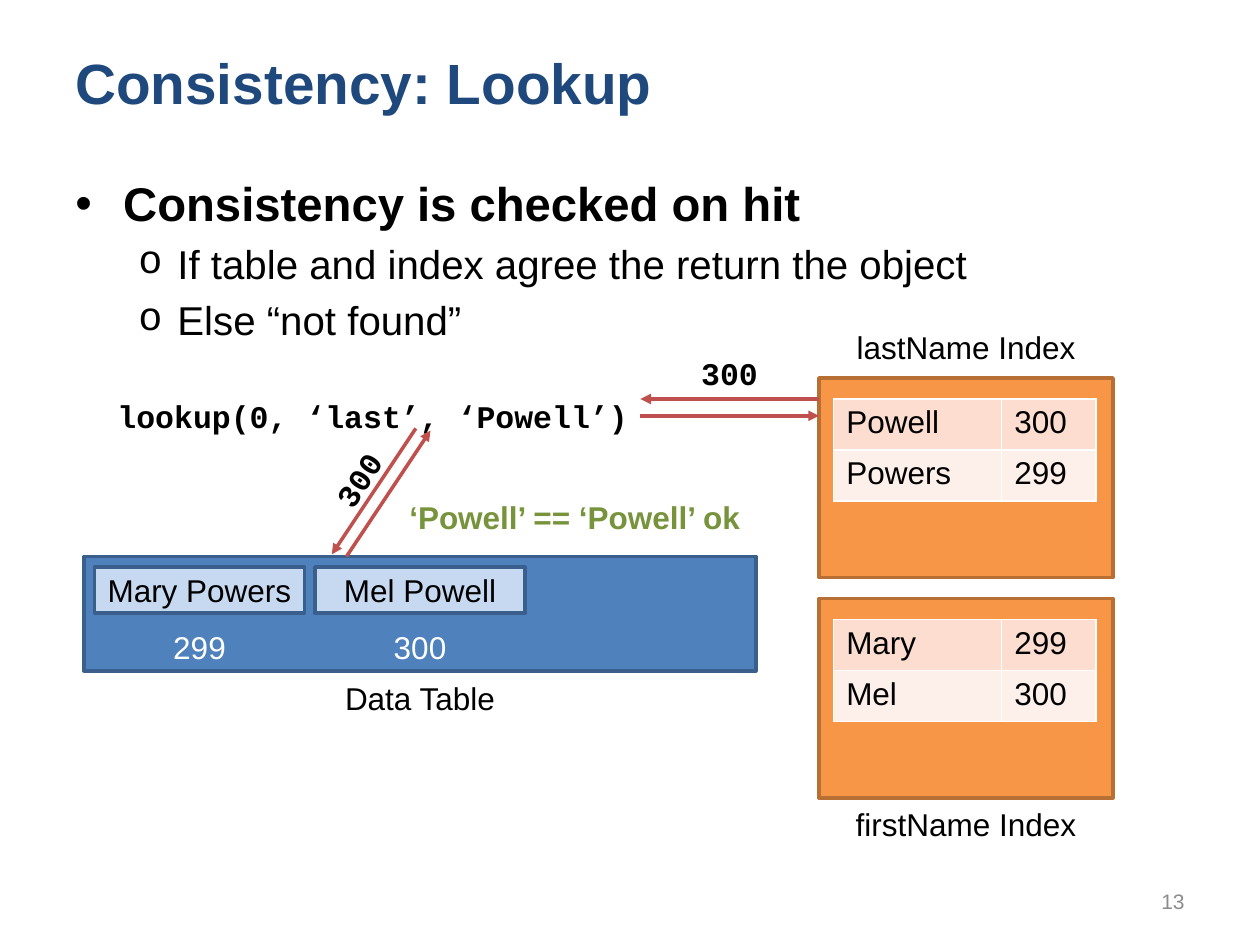
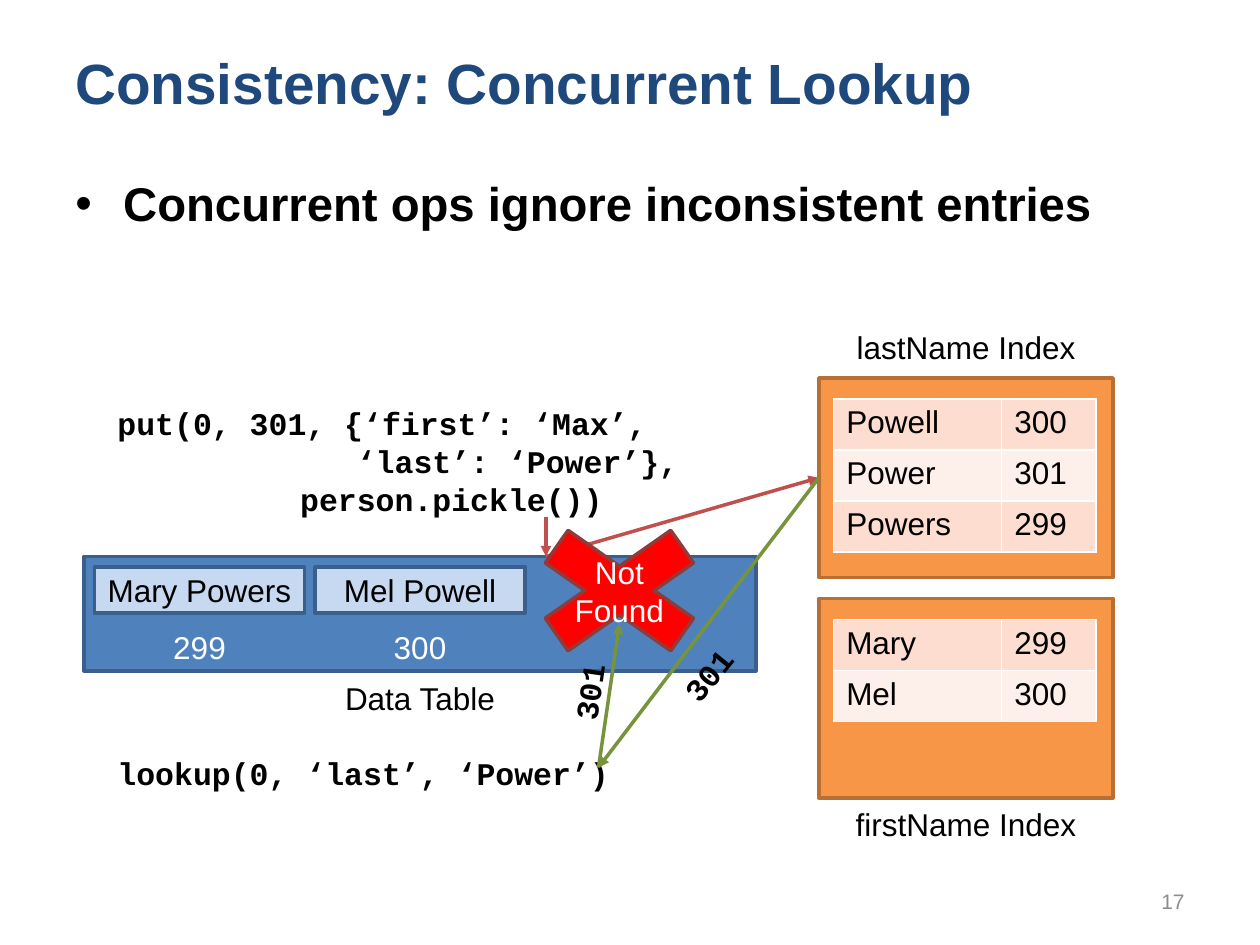
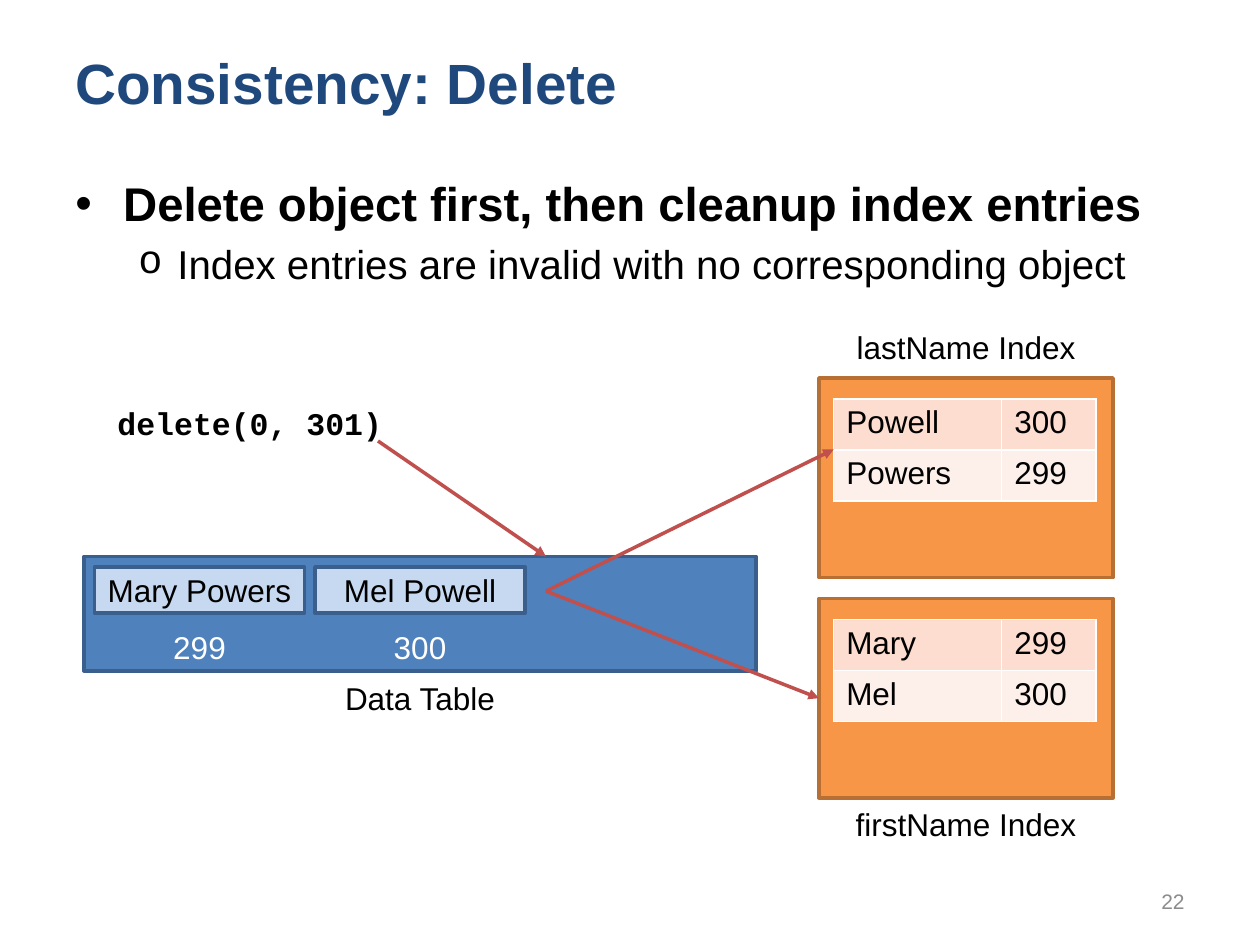
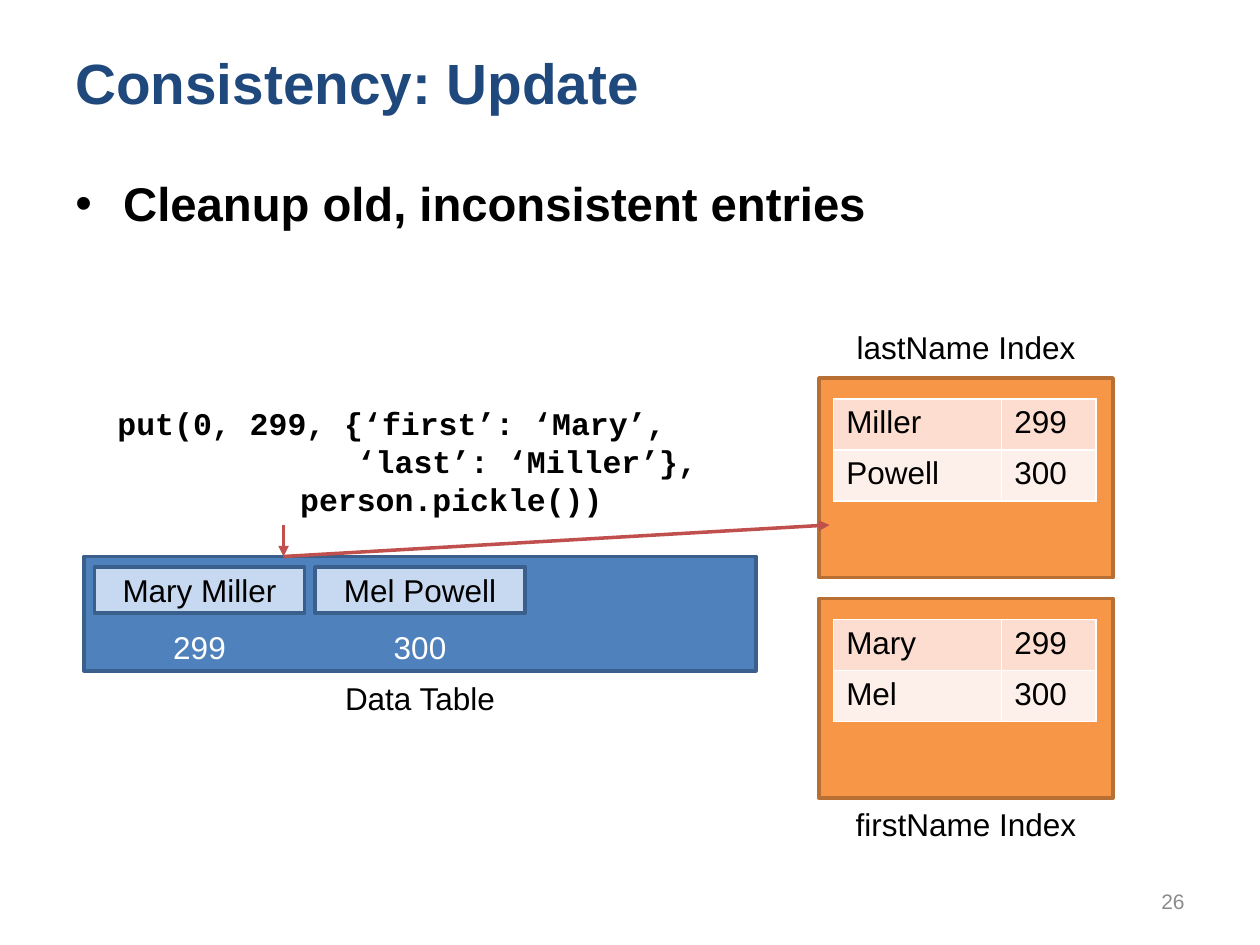
from pptx import Presentation, util as u
from pptx.dml.color import RGBColor
from pptx.enum import shapes as s, text as t
from pptx.oxml import parse_xml
from pptx.oxml.ns import nsdecls


class Theme:
    sans, mono = "Arial", "Courier New"
    black, white, gray = "000000", "FFFFFF", "8C8C8C"
    navy, red, green = "1F497D", "C0504D", "77933C"
    blue, pale, edge = "4F81BD", "C6D9F1", "3A5F8C"
    orange, rust = "F79646", "B76F34"
    bands = "FCDDCF", "FDEFE9"
    cross, maroon = "FF0000", "8E3B39"
    title, head, sub, text, small = 32.4, 27, 23, 18, 12
    line = 2


# The slide is a grid of 120 columns and 90 rows
COLS, ROWS = 120, 90
UNIT = u.Inches(10) // COLS
LINE = 4.8  # height of a one-line label
LEFT, MID, RIGHT = t.PP_ALIGN.LEFT, t.PP_ALIGN.CENTER, t.PP_ALIGN.RIGHT
TOP, HALF = t.MSO_ANCHOR.TOP, t.MSO_ANCHOR.MIDDLE
RECT, CROSS = s.MSO_SHAPE.RECTANGLE, s.MSO_SHAPE.MATH_MULTIPLY


def draw(pool, box, words="", kind=None, fill=None, edge=None, size=Theme.text,
         color=Theme.black, font=Theme.sans, bold=False, align=LEFT, anchor=TOP):
    """Add a shape of the given kind, or a text box, at a place on the grid."""
    place = [round(n * UNIT) for n in box]
    if kind is None:
        item = pool.add_textbox(*place)
    else:
        item = pool.add_shape(kind, *place)
        item.shadow.inherit = False
        item.fill.solid()
        item.fill.fore_color.rgb = RGBColor.from_string(fill)
        item.line.color.rgb = RGBColor.from_string(edge)
        item.line.width = u.Pt(Theme.line)
    frame = item.text_frame
    frame.word_wrap = True
    frame.vertical_anchor = anchor
    frame.text = words
    for para in frame.paragraphs:
        para.alignment = align
        for run in para.runs:
            run.font.name, run.font.size, run.font.bold = font, u.Pt(size), bold
            run.font.color.rgb = RGBColor.from_string(color)
    return item


def link(pool, ends, color):
    """Add an arrow that runs between two grid points."""
    item = pool.add_connector(s.MSO_CONNECTOR.STRAIGHT, *[round(n * UNIT) for n in ends])
    item.line.color.rgb = RGBColor.from_string(color)
    item.line.width = u.Pt(Theme.line)
    item.line._get_or_add_ln().append(
        parse_xml(f'<a:tailEnd {nsdecls("a")} type="triangle"/>'))
    item._element.spPr.append(parse_xml(f'<a:effectLst {nsdecls("a")}/>'))


# What differs from slide to slide
R, G = Theme.red, Theme.green
PEOPLE = ["Mary Powers", "Mel Powell"]
NAMES = [("Powell", "300"), ("Powers", "299")]
PAGES = [
    dict(title="Consistency: Lookup", page="13",
         head="Consistency is checked on hit",
         subs=["If table and index agree the return the object", "Else “not found”"],
         people=PEOPLE, last=NAMES,
         code=[(37.2, "lookup(0, ‘last’, ‘Powell’)")],
         links=[((61, 39.6, 78, 39.6), R), ((39.6, 40.8, 31.6, 52.8), R),
                ((33, 53, 41, 41), R), ((78, 38, 61, 38), R)],
         keys=[("300", 65.6, 33.1, 0), ("300", 30.2, 43.2, 303.3)]),
    dict(title="Consistency: Concurrent Lookup", page="17",
         head="Concurrent ops ignore inconsistent entries", subs=[],
         people=PEOPLE, last=[NAMES[0], ("Power", "301"), NAMES[1]],
         code=[(37.9, "put(0, 301, {‘first’: ‘Max’,\n‘last’: ‘Power’},\nperson.pickle())"),
               (71.2, "lookup(0, ‘last’, ‘Power’)")],
         links=[((52, 49.2, 52, 53), R), ((52, 53, 78, 45.5), R),
                ((57, 73.1, 59, 59.4), G), ((78, 45.5, 57, 73.1), G)],
         keys=[("301", 63.5, 61.8, 309.1), ("301", 52.1, 63.4, 278.2)]),
    dict(title="Consistency: Delete", page="22",
         head="Delete object first, then cleanup index entries",
         subs=["Index entries are invalid with no corresponding object"],
         people=PEOPLE, last=NAMES,
         code=[(37.9, "delete(0, 301)")],
         links=[((36, 42, 52, 53), R), ((52, 56.3, 79.4, 42.8), R),
                ((52, 56.3, 78, 66.5), R)],
         keys=[]),
    dict(title="Consistency: Update", page="26",
         head="Cleanup old, inconsistent entries", subs=[],
         people=["Mary Miller", "Mel Powell"],
         last=[("Miller", "299"), ("Powell", "300")],
         code=[(37.9, "put(0, 299, {‘first’: ‘Mary’,\n‘last’: ‘Miller’},\nperson.pickle())")],
         links=[((27, 50, 27, 53), R), ((27, 53, 79, 50), R)],
         keys=[]),
]
FIRST = [("Mary", "299"), ("Mel", "300")]

deck = Presentation()
deck.slide_width, deck.slide_height = COLS * UNIT, ROWS * UNIT

for page in PAGES:
    pool = deck.slides.add_slide(deck.slide_layouts[6]).shapes

    # Title and page number
    draw(pool, (6, 3.6, 108, 8.4), page["title"], size=Theme.title,
         color=Theme.navy, bold=True, anchor=HALF)
    draw(pool, (86, 83.4, 28, LINE), page["page"], size=Theme.small,
         color=Theme.gray, align=RIGHT, anchor=HALF)

    # Bullets
    body = draw(pool, (6, 16, 108, 64.4), "\n".join([page["head"]] + page["subs"]),
                size=Theme.sub)
    for rank, para in enumerate(body.text_frame.paragraphs):
        if rank == 0:
            mark, face, left, hang = "•", Theme.sans, 0.38, 0.38
            para.runs[0].font.size, para.runs[0].font.bold = u.Pt(Theme.head), True
        else:
            mark, face, left, hang = "o", Theme.mono, 0.81, 0.31
            para.level = 1
        props = para._p.get_or_add_pPr()
        props.set("marL", str(u.Inches(left)))
        props.set("indent", str(-u.Inches(hang)))
        for xml in ('<a:spcBef {}><a:spcPct val="20000"/></a:spcBef>',
                    f'<a:buFont {{}} typeface="{face}"/>',
                    f'<a:buChar {{}} char="{mark}"/>'):
            props.append(parse_xml(xml.format(nsdecls("a"))))

    # Data table with its records
    data = pool.add_group_shape().shapes
    draw(data, (8, 53, 64, 10.9), kind=RECT, fill=Theme.blue, edge=Theme.edge)
    for col, (name, key) in enumerate(zip(page["people"], ("299", "300"))):
        x = 9 + 21 * col
        draw(data, (x, 54, 20, 4.4), name, RECT, Theme.pale, Theme.edge,
             align=MID, anchor=HALF)
        draw(data, (x, 59.2, 20, LINE), key, color=Theme.white, align=MID)
    draw(data, (8, 64.1, 64, LINE), "Data Table", align=MID)

    # The two indexes
    for y, rows, name, high in ((36, page["last"], "lastName Index", 30.7),
                                (57, FIRST, "firstName Index", 76.1)):
        draw(pool, (78, y, 28, 19), kind=RECT, fill=Theme.orange, edge=Theme.rust)
        draw(pool, (78, high, 28, LINE), name, align=MID)
        place = [round(n * UNIT) for n in (79.4, y + 2, 25, 4.86 * len(rows))]
        grid = pool.add_table(len(rows), 2, *place).table
        grid.first_row = grid.horz_banding = False
        for col, wide in enumerate((16, 9)):
            grid.columns[col].width = wide * UNIT
        for row, pair in enumerate(rows):
            for col, word in enumerate(pair):
                cell = grid.cell(row, col)
                for side in "LRTB":
                    cell._tc.get_or_add_tcPr().append(parse_xml(
                        f'<a:ln{side} {nsdecls("a")} w="12700"><a:solidFill>'
                        f'<a:srgbClr val="{Theme.white}"/></a:solidFill></a:ln{side}>'))
                cell.fill.solid()
                cell.fill.fore_color.rgb = RGBColor.from_string(Theme.bands[row % 2])
                cell.text_frame.text = word
                font = cell.text_frame.paragraphs[0].runs[0].font
                font.name, font.size, font.bold = Theme.sans, u.Pt(Theme.text), False
                font.color.rgb = RGBColor.from_string(Theme.black)

    # Calls, with later lines indented
    for y, words in page["code"]:
        lines = words.count("\n") + 1
        call = draw(pool, (10, y, 62, LINE * lines), words, font=Theme.mono, bold=True)
        for para, left in zip(call.text_frame.paragraphs, (0, 1.9, 1.45)):
            para._p.get_or_add_pPr().set("marL", str(u.Inches(left)))

    # Arrows and the keys they carry
    for ends, color in page["links"]:
        link(pool, ends, color)
    for key, x, y, turn in page["keys"]:
        draw(pool, (x, y, 8, LINE), key, font=Theme.mono, bold=True).rotation = turn

    # Outcome of the lookup
    if page["page"] == "13":
        note = draw(pool, (37.8, 46.8, 34.2, LINE), "‘Powell’ == ‘Powell’ ok",
                    color=G, bold=True)
        note.text_frame.word_wrap = False
    elif page["page"] == "17":
        draw(pool, (47.5, 48.2, 23, 16.1), "Not Found", CROSS, Theme.cross,
             Theme.maroon, color=Theme.white, align=MID, anchor=HALF)

deck.save("out.pptx")
